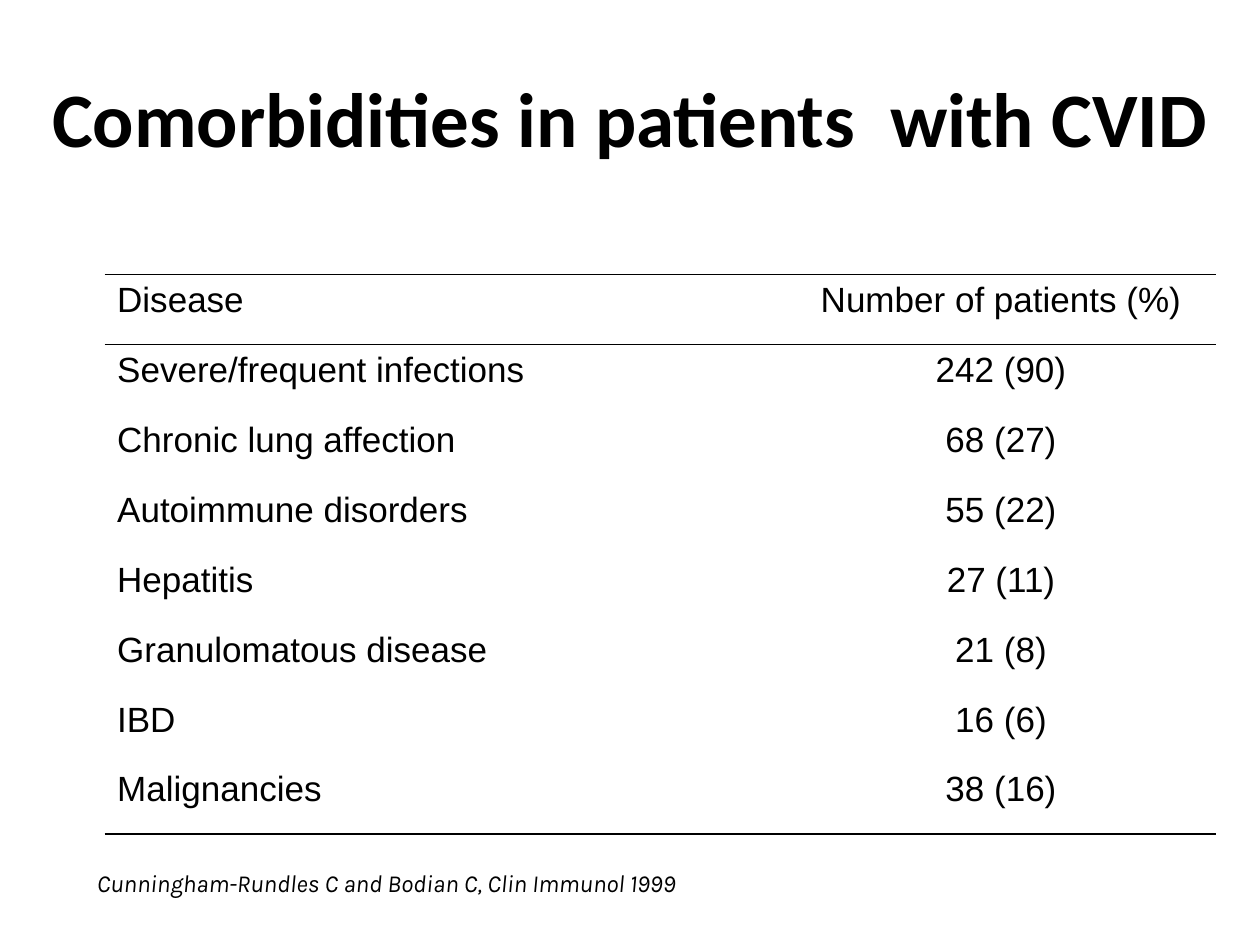
import pptx
import pptx.dml.color
import pptx.enum.text
import pptx.oxml
import pptx.oxml.ns
import pptx.util

Inches = pptx.util.Inches
Align = pptx.enum.text.PP_ALIGN
Anchor = pptx.enum.text.MSO_ANCHOR
BLACK = "000000"


def write(frame, text, size, font, color=BLACK, align=Align.LEFT, bold=False, italic=False):
    paragraph = frame.paragraphs[0]
    paragraph.alignment = align
    run = paragraph.add_run()
    run.text = text
    run.font.size = pptx.util.Pt(size)
    run.font.name = font
    run.font.bold = bold
    run.font.italic = italic
    run.font.color.rgb = pptx.dml.color.RGBColor.from_string(color)


def set_border(cell, side, color=None):
    fill = f'<a:solidFill><a:srgbClr val="{color}"/></a:solidFill>' if color else "<a:noFill/>"
    cell._tc.get_or_add_tcPr().append(pptx.oxml.parse_xml(
        f'<a:ln{side} {pptx.oxml.ns.nsdecls("a")} w="12700">{fill}</a:ln{side}>'))


deck = pptx.Presentation()
deck.slide_width = Inches(10)
deck.slide_height = Inches(7.5)
slide = deck.slides.add_slide(deck.slide_layouts[5])

title = slide.shapes.title
title.left, title.top = Inches(0.2), Inches(0.3)
title.width, title.height = Inches(9.61), Inches(1.25)
title.text_frame.vertical_anchor = Anchor.MIDDLE
write(title.text_frame, "Comorbidities in patients  with CVID", 44, "Calibri",
      align=Align.CENTER, bold=True)

comorbidities = [
    ("Disease", "Number of patients (%)"),
    ("Severe/frequent infections", "242 (90)"),
    ("Chronic lung affection", "68 (27)"),
    ("Autoimmune disorders", "55 (22)"),
    ("Hepatitis", "27 (11)"),
    ("Granulomatous disease", "21 (8)"),
    ("IBD", "16 (6)"),
    ("Malignancies", "38 (16)"),
]
last_row = len(comorbidities) - 1
table = slide.shapes.add_table(len(comorbidities), 2, Inches(0.83), Inches(2.18),
                               Inches(8.82), Inches(4.44)).table
table.first_row = False
table.horz_banding = False
table.columns[0].width = Inches(5.41)
table.columns[1].width = Inches(3.41)

for row, entry in enumerate(comorbidities):
    for column, (text, align) in enumerate(zip(entry, (Align.LEFT, Align.CENTER))):
        cell = table.cell(row, column)
        write(cell.text_frame, text, 20, "Arial", align=align)
        set_border(cell, "L")
        set_border(cell, "R")
        set_border(cell, "T", BLACK if row in (0, 1) else None)
        set_border(cell, "B", BLACK if row in (0, last_row) else None)
        cell.fill.background()

citation = slide.shapes.add_textbox(Inches(0.67), Inches(6.84), Inches(5.19), Inches(0.34))
citation.text_frame.word_wrap = False
citation.text_frame.auto_size = pptx.enum.text.MSO_AUTO_SIZE.SHAPE_TO_FIT_TEXT
write(citation.text_frame, "Cunningham-Rundles C and Bodian C, Clin Immunol 1999", 14, "Karla",
      italic=True)

deck.save("out.pptx")
